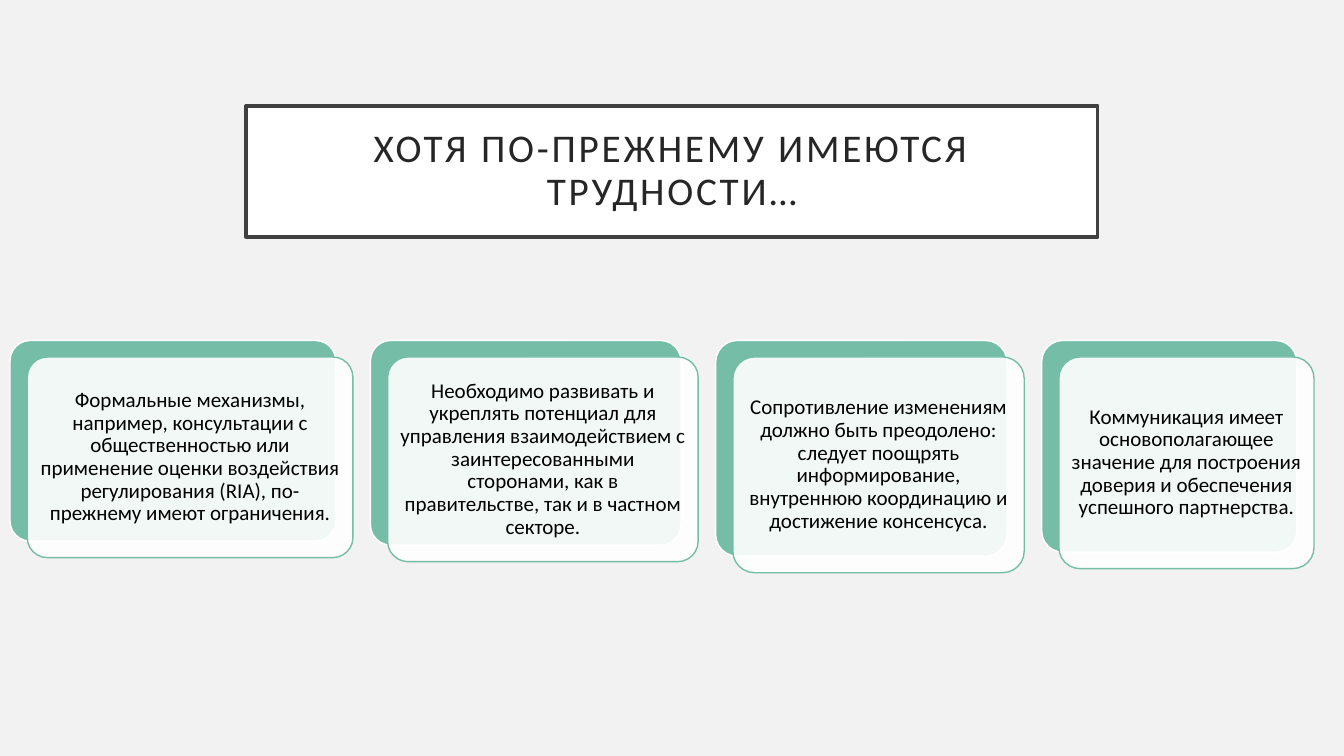
import pptx
import pptx.dml.color
import pptx.enum.shapes
import pptx.enum.text
import pptx.oxml.ns
import pptx.util
from lxml import etree

Pt = pptx.util.Pt

# Content: card width, card height, text
TITLE = "ХОТЯ ПО-ПРЕЖНЕМУ ИМЕЮТСЯ ТРУДНОСТИ…"
CARDS = [
    (232.6, 143.3, "Формальные механизмы, например, консультации с общественностью или "
     "применение оценки воздействия регулирования (RIA), по-прежнему имеют ограничения."),
    (221.8, 146.2, "Необходимо развивать и укреплять потенциал для управления "
     "взаимодействием с заинтересованными сторонами, как в правительстве, "
     "так и в частном секторе."),
    (208.1, 154.1, "Сопротивление изменениям должно быть преодолено: следует поощрять "
     "информирование, внутреннюю координацию и достижение консенсуса."),
    (182.2, 151.2, "Коммуникация имеет основополагающее значение для построения доверия "
     "и обеспечения успешного партнерства."),
]

# Layout and style
FONT = "Calibri"
GREEN = "75BDA7"
WHITE = "FFFFFF"
CARDS_LEFT, CARDS_TOP = 7.2, 243.2
CARD_GAP = 24.8
FRONT_SHIFT_X, FRONT_SHIFT_Y = 12.3, 11.8


def color(hex_string):
    return pptx.dml.color.RGBColor.from_string(hex_string)


def paint(shape, fill, line, line_width):
    shape.fill.solid()
    shape.fill.fore_color.rgb = color(fill)
    shape.line.color.rgb = color(line)
    shape.line.width = Pt(line_width)


def write(shape, text, size, text_color, inset):
    frame = shape.text_frame
    frame.word_wrap = True
    frame.auto_size = pptx.enum.text.MSO_AUTO_SIZE.NONE
    frame.vertical_anchor = pptx.enum.text.MSO_ANCHOR.MIDDLE
    frame.margin_left = frame.margin_right = Pt(inset)
    frame.margin_top = frame.margin_bottom = Pt(inset)
    paragraph = frame.paragraphs[0]
    paragraph.alignment = pptx.enum.text.PP_ALIGN.CENTER
    paragraph.line_spacing = 0.9
    run = paragraph.add_run()
    run.text = text
    run.font.name = FONT
    run.font.size = Pt(size)
    run.font.color.rgb = color(text_color)
    return run


def add_card(slide, left, top, width, height, fill, line):
    card = slide.shapes.add_shape(
        pptx.enum.shapes.MSO_SHAPE.ROUNDED_RECTANGLE,
        Pt(left), Pt(top), Pt(width), Pt(height))
    card.adjustments[0] = 0.1
    card.shadow.inherit = False
    paint(card, fill, line, 1)
    return card


def set_opacity(shape, percent):
    fill_color = shape.fill._xPr.find(".//" + pptx.oxml.ns.qn("a:srgbClr"))
    alpha = etree.SubElement(fill_color, pptx.oxml.ns.qn("a:alpha"))
    alpha.set("val", str(percent * 1000))


def main():
    presentation = pptx.Presentation()
    presentation.slide_width, presentation.slide_height = Pt(960), Pt(540)
    slide = presentation.slides.add_slide(presentation.slide_layouts[5])
    slide.background.fill.solid()
    slide.background.fill.fore_color.rgb = color("F2F2F2")

    # Framed title with wide letter spacing
    title = slide.shapes.title
    title.left, title.top, title.width, title.height = Pt(175.7), Pt(75.6), Pt(608.4), Pt(93.6)
    paint(title, WHITE, "404040", 2.5)
    title_run = write(title, TITLE, 28, "262626", 14.4)
    title_run.font._element.set("spc", "200")

    # Row of cards: green back, translucent front with the text
    left = CARDS_LEFT
    for width, height, text in CARDS:
        add_card(slide, left, CARDS_TOP, width, height, GREEN, WHITE)
        front = add_card(slide, left + FRONT_SHIFT_X, CARDS_TOP + FRONT_SHIFT_Y,
                         width, height, WHITE, GREEN)
        set_opacity(front, 90)
        write(front, text, 15, "000000", 4.5)
        left += width + CARD_GAP

    presentation.save("out.pptx")


if __name__ == "__main__":
    main()
